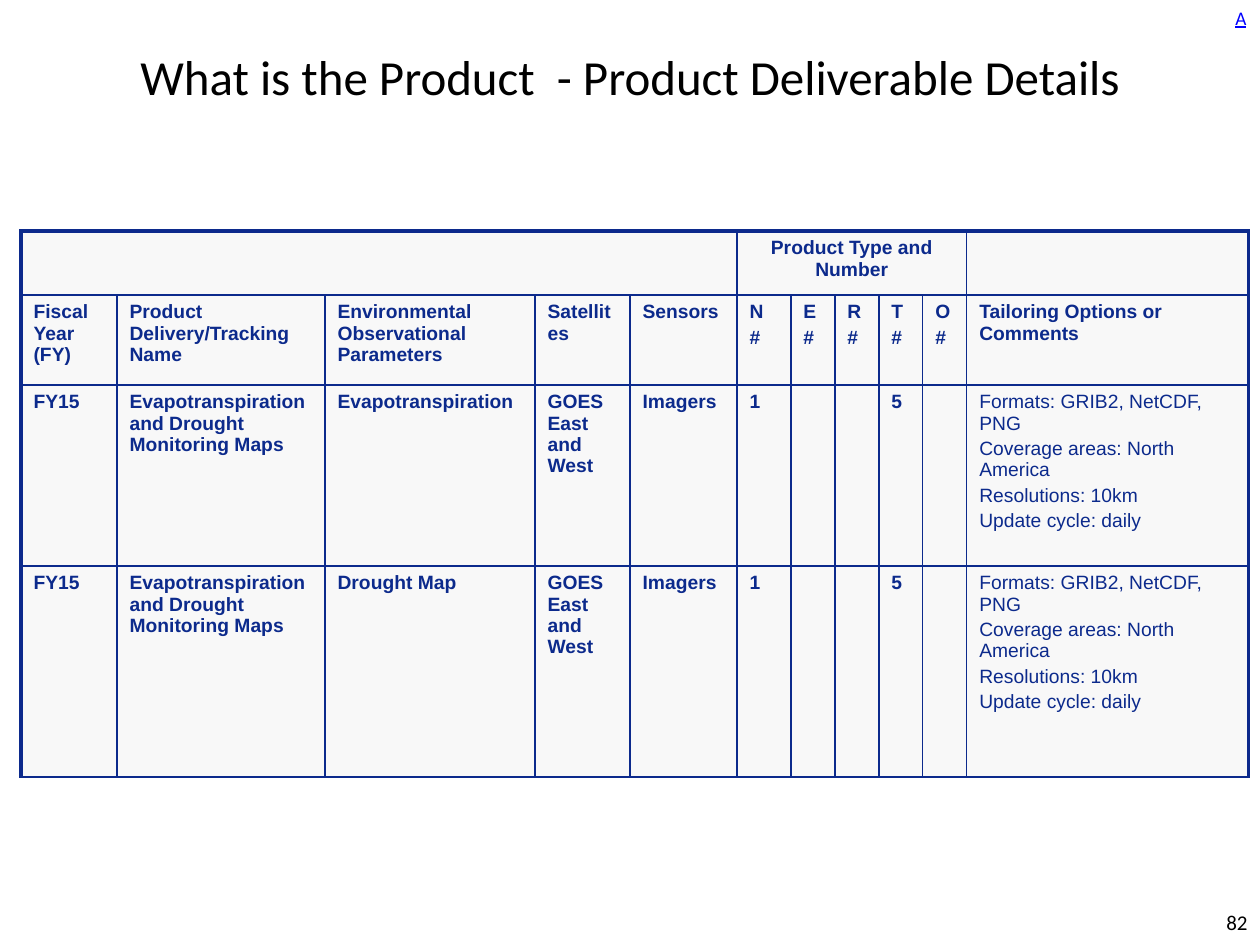
"""Builds the product deliverable details slide with its table."""
from lxml import etree
from pptx import Presentation
from pptx import util as u
from pptx.dml.color import RGBColor
from pptx.enum import text
from pptx.oxml.ns import qn

PX = 914400 / 126
COLORS = {"navy": "0C2A8C", "pale": "F8F8F8", "black": "000000", "link": "0000FF"}


def style(paragraph, size, face, color, bold=False, underline=False):
    for run in paragraph.runs:
        run.font.size = u.Pt(size)
        run.font.name = face
        run.font.bold = bold
        run.font.underline = underline
        run.font.color.rgb = RGBColor.from_string(COLORS[color])


def add_border(cell, position, side, width):
    line = etree.Element(qn(f"a:ln{side}"), w=str(u.Pt(width)))
    if width:
        fill = etree.SubElement(line, qn("a:solidFill"))
        etree.SubElement(fill, qn("a:srgbClr"), val=COLORS["navy"])
    else:
        etree.SubElement(line, qn("a:noFill"))
    cell._tc.get_or_add_tcPr().insert(position, line)


deck = Presentation()
deck.slide_width, deck.slide_height = u.Inches(10), u.Inches(7.5)
slide = deck.slides.add_slide(deck.slide_layouts[6])

left, center, right = text.PP_ALIGN.LEFT, text.PP_ALIGN.CENTER, text.PP_ALIGN.RIGHT
top, middle = text.MSO_ANCHOR.TOP, text.MSO_ANCHOR.MIDDLE
captions = [
    ("82", (1166, 897, 94, 50), 12, "black", right, middle, True),
    ("A", (1223, 0, 37, 37), 11, "link", left, top, False),
    ("What is the Product  - Product Deliverable Details", (0, 0, 1260, 151),
     28, "black", center, middle, True),
]
for wording, place, size, color, align, anchor, wrap in captions:
    frame = slide.shapes.add_textbox(*(round(v * PX) for v in place)).text_frame
    frame.word_wrap = wrap
    frame.vertical_anchor = anchor
    frame.text = wording
    frame.paragraphs[0].alignment = align
    style(frame.paragraphs[0], size, "Calibri", color, underline=color == "link")

column_widths = [96, 208, 210, 95, 107, 54, 44, 44, 44, 44, 282]
row_heights = [64, 90, 181, 211]
tailoring = ("Formats: GRIB2, NetCDF, PNG\nCoverage areas: North America\n"
             "Resolutions: 10km\nUpdate cycle: daily")
product_rows = [
    ["FY15", "Evapotranspiration and Drought Monitoring Maps", parameter,
     "GOES East and West", "Imagers", "1", "", "", "5", "", tailoring]
    for parameter in ("Evapotranspiration", "Drought Map")
]
entries = [
    [""] * 5 + ["Product Type and Number"] + [""] * 5,
    ["Fiscal Year (FY)", "Product Delivery/Tracking Name",
     "Environmental Observational Parameters", "Satellites", "Sensors",
     *(f"{letter}\n#" for letter in "NERTO"), "Tailoring Options or Comments"],
    *product_rows,
]

last = len(column_widths) - 1
deliverables = slide.shapes.add_table(
    len(row_heights), len(column_widths), round(21 * PX), round(231 * PX),
    round(sum(column_widths) * PX), round(sum(row_heights) * PX)).table
deliverables.first_row = deliverables.horz_banding = False
for column, width in zip(deliverables.columns, column_widths):
    column.width = round(width * PX)
for row, height in zip(deliverables.rows, row_heights):
    row.height = round(height * PX)
deliverables.cell(0, 5).merge(deliverables.cell(0, 9))

for r, values in enumerate(entries):
    for c, value in enumerate(values):
        cell = deliverables.cell(r, c)
        cell.fill.solid()
        cell.fill.fore_color.rgb = RGBColor.from_string(COLORS["pale"])
        widths = {
            "L": 2.25 if c == 0 else 0 if r == 0 and c < 5 else 1,
            "R": 2.25 if c == last else 0 if r == 0 and c < 4 else 1,
            "T": 2.25 if r == 0 else 1,
            "B": 1,
        }
        for position, (side, width) in enumerate(widths.items()):
            add_border(cell, position, side, width)
        if not value:
            continue
        cell.text_frame.text = value
        for n, paragraph in enumerate(cell.text_frame.paragraphs):
            paragraph.alignment = center if r == 0 else left
            if n:
                paragraph.space_before = u.Pt(2.2)
            style(paragraph, 11, "Arial", "navy", bold=r < 2 or c < last)

deck.save("out.pptx")
